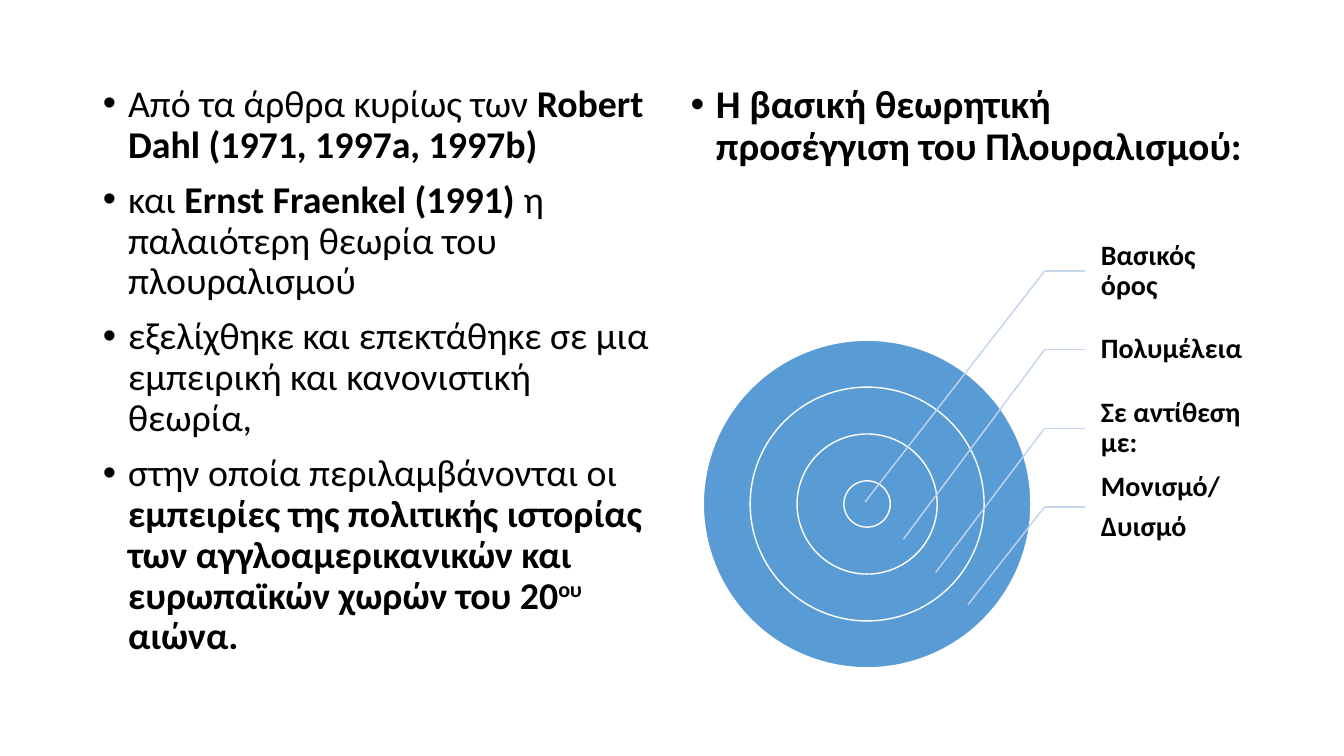
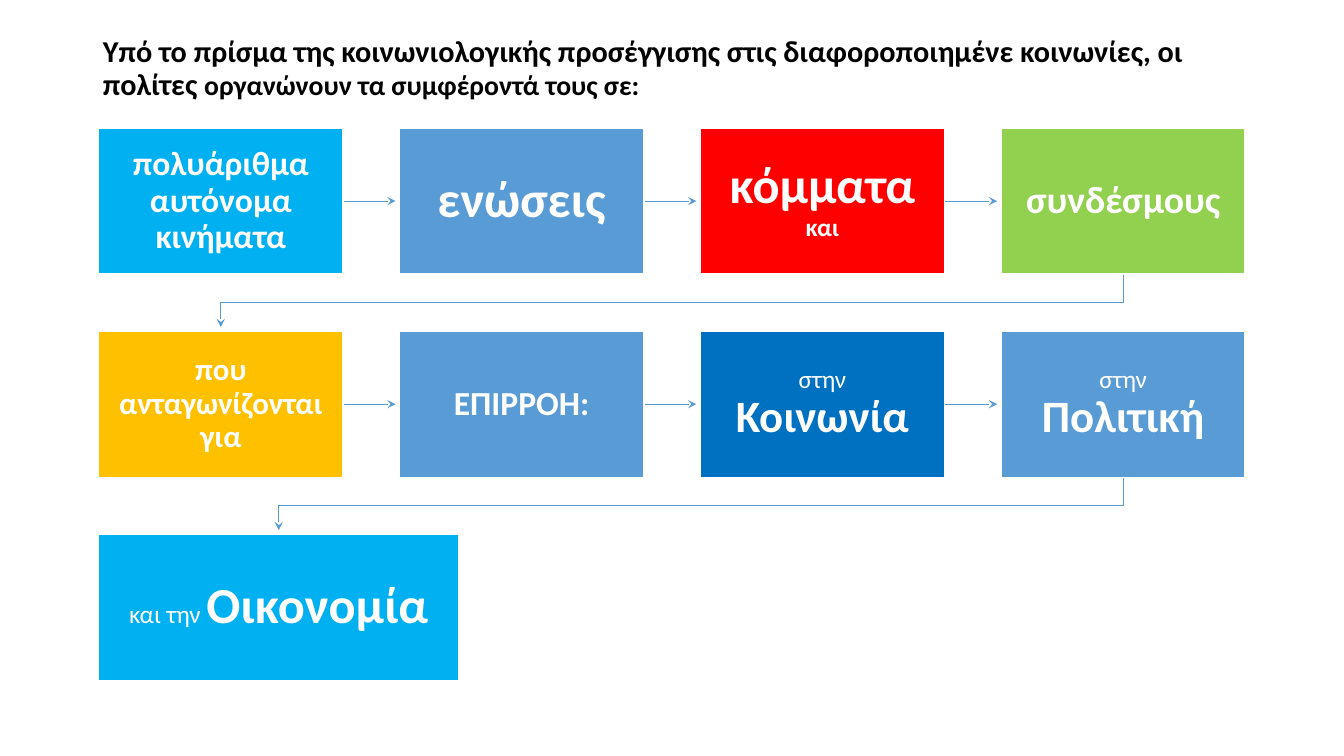
from lxml.etree import SubElement
from pptx import Presentation
from pptx.dml.color import RGBColor
from pptx.enum.shapes import MSO_CONNECTOR, MSO_SHAPE
from pptx.enum.text import MSO_ANCHOR, MSO_AUTO_SIZE, PP_ALIGN
from pptx.oxml.ns import qn
from pptx.util import Pt

PX = 9144  # one hundredth of an inch
FONT = "Calibri"
COLORS = {
    "text": "000000", "white": "FFFFFF", "blue": "599BD5", "pale": "C3D4EB",
    "cyan": "00B0F0", "red": "FF0000", "green": "92D050",
    "amber": "FFC000", "navy": "0070C0",
}
BOLD = {"bold": True}

# Each paragraph is a list of (text, format) runs.
SOURCES = [
    [("Από τα άρθρα κυρίως των ", {}),
     ("Robert Dahl (1971, 1997a, 1997b)", BOLD)],
    [("και ", {}), ("Ernst Fraenkel (1991) ", BOLD),
     ("η παλαιότερη θεωρία του πλουραλισμού", {})],
    [("εξελίχθηκε και επεκτάθηκε σε μια εμπειρική και κανονιστική θεωρία,", {})],
    [("στην οποία περιλαμβάνονται οι ", {}),
     ("εμπειρίες της πολιτικής ιστορίας των αγγλοαμερικανικών και "
      "ευρωπαϊκών χωρών του 20", BOLD),
     ("ου", {"bold": True, "raised": True}), (" αιώνα.", BOLD)],
]
APPROACH = [[("Η βασική θεωρητική προσέγγιση του Πλουραλισμού:", BOLD)]]
COLUMNS = [  # left, size, paragraphs
    (92, 27, SOURCES),
    (675, 28, APPROACH),
]
RING_CENTER = (860, 500)
RING_DIAMETERS = [46 + 93 * step for step in (3, 2, 1, 0)]
RING_LABELS = [  # lines, box height, point in the rings
    (["Βασικός όρος"], 112, (858, 498)),
    (["Πολυμέλεια"], 78, (896, 535)),
    (["Σε αντίθεση με:"], 78, (928, 568)),
    (["Μονισμό/", "Δυισμό"], 98, (960, 600)),
]
LABEL_TOP, LABEL_PITCH = 269, 78
ELBOW_X, LABEL_X, LABEL_WIDTH = 1036, 1076, 162

FLOW_TITLE = [[
    ("Υπό το πρίσμα της κοινωνιολογικής προσέγγισης στις διαφοροποιημένε "
     "κοινωνίες, οι πολίτες ", {"size": 21.6}),
    ("οργανώνουν τα συμφέροντά τους σε:", {"size": 19.8}),
]]
FLOW_STEPS = [  # fill, padding, runs
    ("cyan", 19, [("πολυάριθμα αυτόνομα κινήματα", {"size": 24, "bold": True})]),
    ("blue", 28, [("ενώσεις", {"size": 36, "bold": True})]),
    ("red", 28, [("κόμματα", {"size": 36, "bold": True}),
                 (" και", {"size": 18, "bold": True})]),
    ("green", 21, [("συνδέσμους", {"size": 27, "bold": True})]),
    ("amber", 17, [("που ανταγωνίζονται για", {"size": 22, "bold": True})]),
    ("blue", 19, [("ΕΠΙΡΡΟΗ:", {"size": 24, "bold": True})]),
    ("navy", 14, [("στην ", {"size": 18}),
                  ("Κοινωνία", {"size": 32, "bold": True})]),
    ("blue", 14, [("στην ", {"size": 18}),
                  ("Πολιτική", {"size": 32, "bold": True})]),
    ("cyan", 14, [("και την ", {"size": 18}),
                  ("Οικονομία", {"size": 36, "bold": True})]),
]
PER_ROW = 4
STEP_LEFT, STEP_TOP = 98, 127
STEP_WIDTH, LAST_WIDTH, STEP_HEIGHT = 242, 357, 145
PITCH_X, PITCH_Y = 895 / 3, 403 / 2


def px(*lengths):
    return [round(length * PX) for length in lengths]


def color(name):
    return RGBColor.from_string(COLORS[name])


def add_bullet(para):
    properties = para._p.get_or_add_pPr()
    properties.set("marL", str(25 * PX))
    properties.set("indent", str(-25 * PX))
    tint = SubElement(properties, qn("a:buClr"))
    SubElement(tint, qn("a:srgbClr"), val=COLORS["text"])
    SubElement(properties, qn("a:buFont"), typeface="Arial")
    SubElement(properties, qn("a:buChar"), char="•")


def write_text(shape, paragraphs, size=20, bold=False, ink="text", gap=0,
               bullets=False, align=PP_ALIGN.LEFT, anchor=MSO_ANCHOR.MIDDLE,
               insets=(10, 5, 10, 5)):
    frame = shape.text_frame
    frame.word_wrap = True
    frame.auto_size = MSO_AUTO_SIZE.NONE
    frame.vertical_anchor = anchor
    (frame.margin_left, frame.margin_top,
     frame.margin_right, frame.margin_bottom) = px(*insets)
    for index, runs in enumerate(paragraphs):
        para = frame.add_paragraph() if index else frame.paragraphs[0]
        para.alignment = align
        para.line_spacing = 0.9
        para.space_before = Pt(gap if index else 0)
        if bullets:
            add_bullet(para)
        for text, style in runs:
            span = para.add_run()
            span.text = text
            span.font.name = FONT
            span.font.size = Pt(style.get("size", size))
            span.font.bold = style.get("bold", bold)
            span.font.color.rgb = color(ink)
            if style.get("raised"):
                span._r.get_or_add_rPr().set("baseline", "30000")


def place(shape, *bounds):
    shape.left, shape.top, shape.width, shape.height = px(*bounds)


def add_filled(slide, kind, bounds, fill):
    shape = slide.shapes.add_shape(kind, *px(*bounds))
    shape.shadow.inherit = False
    shape.fill.solid()
    shape.fill.fore_color.rgb = color(fill)
    shape.line.color.rgb = color("white")
    shape.line.width = Pt(1)
    return shape


def add_line(slide, points, ink, width, arrow=False):
    """Draw a straight connector, or an open outline when the path bends."""
    if len(points) == 2:
        line = slide.shapes.add_connector(
            MSO_CONNECTOR.STRAIGHT, *px(*points[0], *points[1]))
        SubElement(line._element.spPr, qn("a:effectLst"))
    else:
        builder = slide.shapes.build_freeform(*px(*points[0]))
        builder.add_line_segments([px(*point) for point in points[1:]], close=False)
        line = builder.convert_to_shape()
        line.fill.background()
        line.shadow.inherit = False
    line.line.color.rgb = color(ink)
    line.line.width = Pt(width)
    if arrow:
        SubElement(line.line._get_or_add_ln(), qn("a:tailEnd"), type="stealth")


def build_theory(deck):
    slide = deck.slides.add_slide(deck.slide_layouts[3])
    title, *bodies = slide.placeholders
    title.element.getparent().remove(title.element)
    for body, (left, size, paragraphs) in zip(bodies, COLUMNS):
        place(body, left, 79, 567, 597)
        write_text(body, paragraphs, size=size, gap=10, bullets=True,
                   anchor=MSO_ANCHOR.TOP)

    center_x, center_y = RING_CENTER
    for diameter in RING_DIAMETERS:
        bounds = (center_x - diameter / 2, center_y - diameter / 2,
                  diameter, diameter)
        add_filled(slide, MSO_SHAPE.OVAL, bounds, "blue")

    for index, (lines, height, target) in enumerate(RING_LABELS):
        y = LABEL_TOP + index * LABEL_PITCH
        label = slide.shapes.add_textbox(
            *px(LABEL_X, y - height / 2, LABEL_WIDTH, height))
        write_text(label, [[(line, BOLD)] for line in lines], gap=7,
                   insets=(16, 3, 3, 3))
        for end in ((LABEL_X, y), target):
            add_line(slide, [(ELBOW_X, y), end], "pale", 1)


def build_flow(deck):
    slide = deck.slides.add_slide(deck.slide_layouts[5])
    title = slide.shapes.title
    place(title, 92, 40, 1150, 87)
    write_text(title, FLOW_TITLE, bold=True, insets=(10, 5, 10, 35))

    last = len(FLOW_STEPS) - 1
    for index, (fill, pad, runs) in enumerate(FLOW_STEPS):
        row, column = divmod(index, PER_ROW)
        left = STEP_LEFT + column * PITCH_X
        top = STEP_TOP + row * PITCH_Y
        width = LAST_WIDTH if index == last else STEP_WIDTH
        box = add_filled(slide, MSO_SHAPE.RECTANGLE,
                         (left, top, width, STEP_HEIGHT), fill)
        write_text(box, [runs], ink="white", align=PP_ALIGN.CENTER,
                   insets=(pad,) * 4)
        if index == last:
            continue
        if column < PER_ROW - 1:
            y = top + STEP_HEIGHT / 2
            points = [(left + width + 1, y), (left + PITCH_X - 4, y)]
        else:
            next_width = LAST_WIDTH if index + 1 == last else STEP_WIDTH
            start_x, end_x = left + width / 2, STEP_LEFT + next_width / 2
            bottom = top + STEP_HEIGHT
            turn = bottom + (PITCH_Y - STEP_HEIGHT) / 2
            points = [(start_x, bottom + 1), (start_x, turn),
                      (end_x, turn), (end_x, top + PITCH_Y - 4)]
        add_line(slide, points, "blue", 0.75, arrow=True)


def main():
    deck = Presentation()
    deck.slide_width, deck.slide_height = px(1333, 750)
    build_theory(deck)
    build_flow(deck)
    deck.save("out.pptx")


if __name__ == "__main__":
    main()
